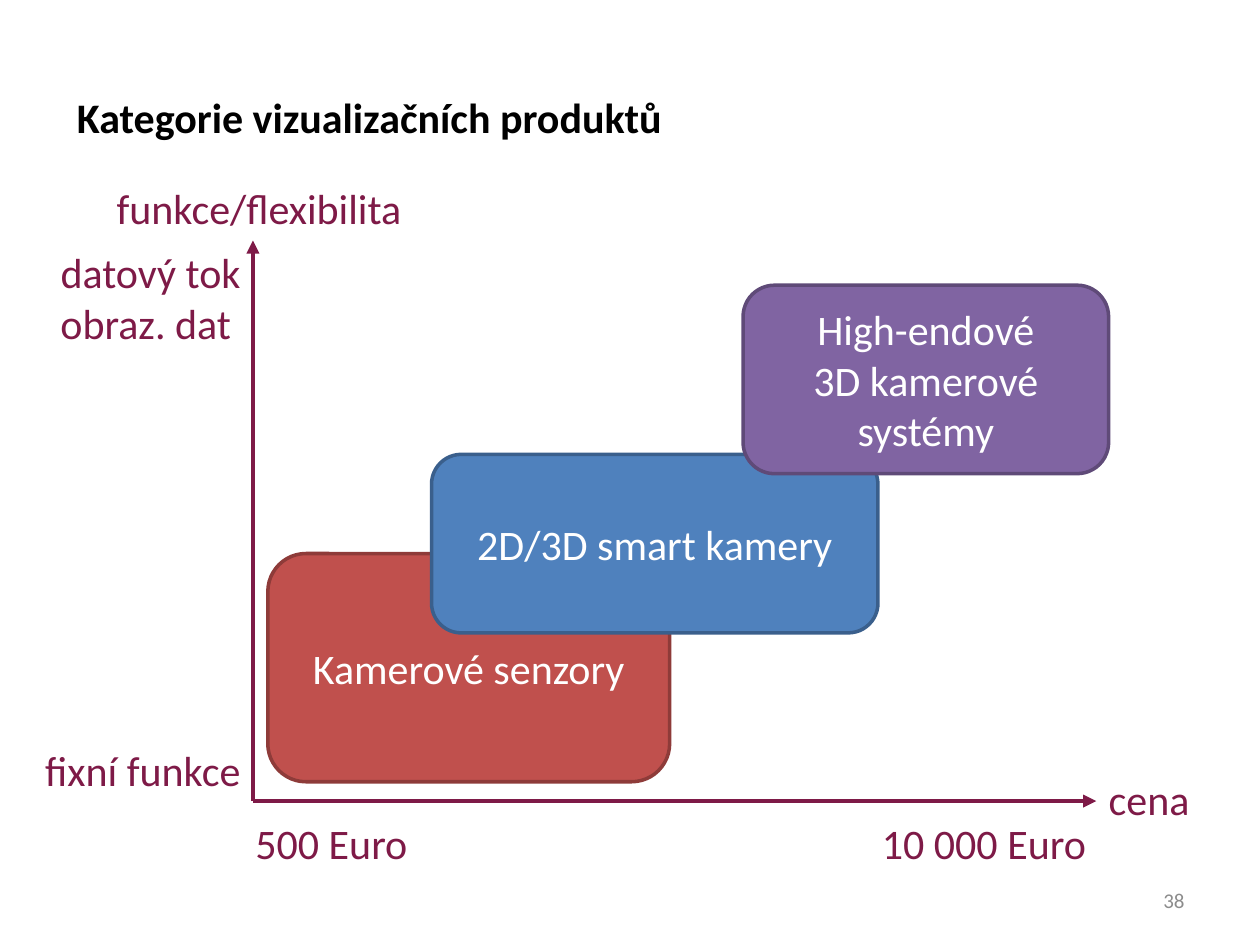
from pptx import Presentation
from pptx.dml.color import RGBColor
from pptx.enum.shapes import MSO_CONNECTOR, MSO_SHAPE
from pptx.enum.text import MSO_ANCHOR, PP_ALIGN
from pptx.oxml.ns import qn
from pptx.util import Cm, Pt
from lxml.etree import SubElement

HUES = {
    "black": "000000", "white": "FFFFFF", "gray": "8C8C8C", "wine": "7E1A47",
    "red": "C0504D", "red edge": "8E3B39",
    "blue": "4F81BD", "blue edge": "3A5F8C",
    "violet": "8064A2", "violet edge": "5F4A78",
}
LEFT, RIGHT, MID = PP_ALIGN.LEFT, PP_ALIGN.RIGHT, PP_ALIGN.CENTER


def color(name):
    return RGBColor.from_string(HUES[name])


class Deck:
    """Holds the text style and the slide being drawn."""
    face = "Calibri"
    size = 24

    def __init__(self, slide):
        self.slide = slide

    def fill_text(self, frame, text, hue, align, anchor, size=None, bold=False):
        frame.word_wrap = True
        frame.vertical_anchor = anchor
        frame.text = text
        for para in frame.paragraphs:
            para.alignment = align
            font = para.font
            font.name = self.face
            font.size = Pt(size or self.size)
            font.bold = bold
            font.color.rgb = color(hue)

    def label(self, text, box, hue="wine", align=LEFT, anchor=MSO_ANCHOR.TOP,
              **style):
        shape = self.slide.shapes.add_textbox(*map(Cm, box))
        self.fill_text(shape.text_frame, text, hue, align, anchor, **style)

    def block(self, text, box, hue):
        shape = self.slide.shapes.add_shape(
            MSO_SHAPE.ROUNDED_RECTANGLE, *map(Cm, box))
        shape.shadow.inherit = False
        shape.fill.solid()
        shape.fill.fore_color.rgb = color(hue)
        shape.line.color.rgb = color(hue + " edge")
        shape.line.width = Pt(2)
        self.fill_text(shape.text_frame, text, "white", MID, MSO_ANCHOR.MIDDLE)

    def arrow(self, start, end):
        link = self.slide.shapes.add_connector(
            MSO_CONNECTOR.STRAIGHT, *map(Cm, start + end))
        link.line.color.rgb = color("wine")
        link.line.width = Pt(2.5)
        SubElement(link.line._get_or_add_ln(), qn("a:tailEnd"), type="triangle")
        SubElement(link._element.spPr, qn("a:effectLst"))


def main():
    prs = Presentation()
    prs.slide_width, prs.slide_height = Cm(25.4), Cm(19.05)
    deck = Deck(prs.slides.add_slide(prs.slide_layouts[6]))

    deck.label("38", (18.2, 17.65, 5.93, 1.01), "gray", RIGHT,
               MSO_ANCHOR.MIDDLE, size=12)
    deck.label("Kategorie vizualizačních produktů", (1.3, 1.73, 22.83, 1.28),
               "black", bold=True)

    base = (5.1, 16.15)
    deck.arrow(base, (5.1, 4.85))
    deck.arrow(base, (22.1, 16.15))

    row = 1.28
    deck.label("funkce/flexibilita", (2.1, 3.56, 6.6, row))
    deck.label("cena", (22.1, 15.47, 2.46, row))
    deck.label("500 Euro", (4.9, 16.35, 6.6, row))
    deck.label("10 000 Euro", (17.53, 16.35, 6.6, row))
    deck.label("fixní funkce", (0.3, 14.88, 4.8, row), align=RIGHT)
    deck.label("datový tok obraz. dat ", (0.9, 4.85, 4.2, 2.31), align=RIGHT)

    deck.block("Kamerové senzory", (5.4, 11.16, 8.1, 4.6), "red")
    deck.block("2D/3D smart kamery", (8.7, 9.16, 9, 3.6), "blue")
    deck.block("High-endové\n3D kamerové systémy", (14.98, 5.75, 7.37, 3.8),
               "violet")

    prs.save("out.pptx")


if __name__ == "__main__":
    main()
